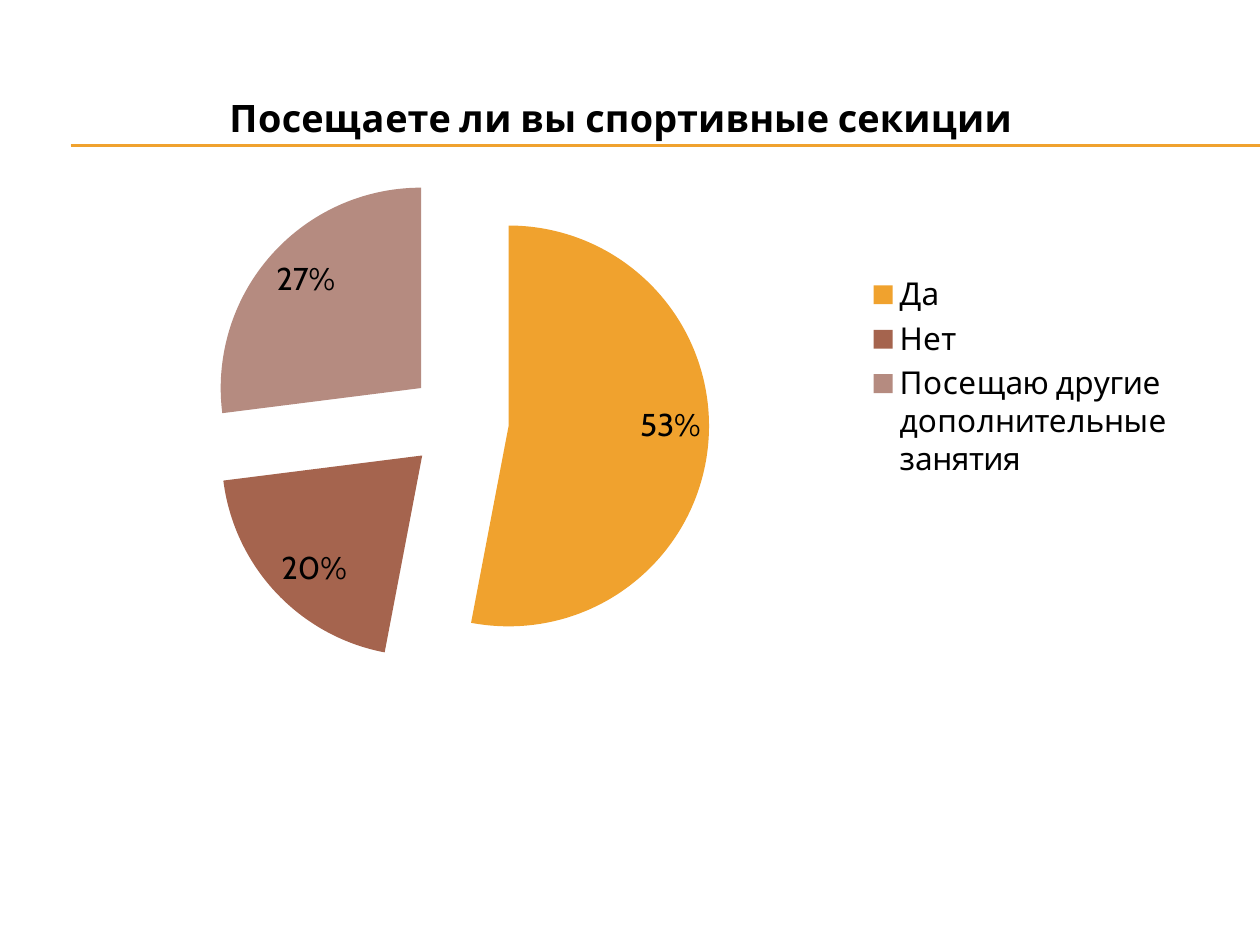
import pptx
import pptx.chart.data
import pptx.dml.color
import pptx.enum.chart
import pptx.enum.shapes
import pptx.oxml
import pptx.oxml.ns
import pptx.util
from pptx.util import Inches

RGB = pptx.dml.color.RGBColor
BLACK = RGB(0x00, 0x00, 0x00)
GOLD = RGB(0xF0, 0xA2, 0x2E)
RUST = RGB(0xA5, 0x64, 0x4E)
ROSE = RGB(0xB5, 0x8B, 0x80)

TITLE = "Посещаете ли вы спортивные секиции"
SHARES = [
    ("Да", 53, GOLD),
    ("Нет", 20, RUST),
    ("Посещаю другие дополнительные занятия", 27, ROSE),
]
BODY = {"name": "Cabin", "size": pptx.util.Pt(18)}
HEAD = {"name": "Cabin", "size": pptx.util.Pt(21.6), "bold": True}
LABEL = {
    "show_percentage": True,
    "show_value": False,
    "number_format": "0%",
    "number_format_is_linked": False,
    "position": pptx.enum.chart.XL_LABEL_POSITION.INSIDE_END,
}
LEGEND = {
    "position": pptx.enum.chart.XL_LEGEND_POSITION.RIGHT,
    "include_in_layout": False,
}


def apply(item, style):
    for key, value in style.items():
        setattr(item, key, value)


def set_font(font, style):
    apply(font, style)
    font.color.rgb = BLACK


def add_rule(slide, top):
    rule = slide.shapes.add_connector(
        pptx.enum.shapes.MSO_CONNECTOR.STRAIGHT,
        Inches(0.56), Inches(top), Inches(10), Inches(top))
    rule.line.color.rgb = GOLD
    rule.line.width = pptx.util.Pt(0.75)
    props = rule.element.find(pptx.oxml.ns.qn("p:spPr"))
    props.append(pptx.oxml.parse_xml(
        f'<a:effectLst {pptx.oxml.ns.nsdecls("a")}/>'))


def split_pie(series, gap):
    """Pull all slices out from the centre by gap percent."""
    burst = pptx.oxml.parse_xml(
        f'<c:explosion {pptx.oxml.ns.nsdecls("c")} val="{gap}"/>')
    series.format.fill.solid()
    series.format.fill.fore_color.rgb = GOLD
    series._element.find(pptx.oxml.ns.qn("c:spPr")).addnext(burst)


def add_pie(slide):
    data = pptx.chart.data.CategoryChartData()
    data.categories = [name for name, _, _ in SHARES]
    data.add_series(TITLE, [value for _, value, _ in SHARES])
    chart = slide.shapes.add_chart(
        pptx.enum.chart.XL_CHART_TYPE.PIE,
        Inches(0.43), Inches(0.52), Inches(9), Inches(4.95), data).chart
    set_font(chart.font, BODY)

    chart.has_title = True
    frame = chart.chart_title.text_frame
    frame.text = TITLE
    set_font(frame.paragraphs[0].runs[0].font, HEAD)

    chart.has_legend = True
    apply(chart.legend, LEGEND)
    set_font(chart.legend.font, BODY)

    plot = chart.plots[0]
    plot.vary_by_categories = True
    series = plot.series[0]
    split_pie(series, 25)
    for index, (_, _, color) in enumerate(SHARES):
        fill = series.points[index].format.fill
        fill.solid()
        fill.fore_color.rgb = color
    plot.has_data_labels = True
    apply(plot.data_labels, LABEL)
    set_font(plot.data_labels.font, BODY)


def main():
    deck = pptx.Presentation()
    deck.slide_width = Inches(10)
    deck.slide_height = Inches(7.5)
    slide = deck.slides.add_slide(deck.slide_layouts[6])
    for top in (1.15, 1.16):
        add_rule(slide, top)
    add_pie(slide)
    deck.save("out.pptx")


if __name__ == "__main__":
    main()
